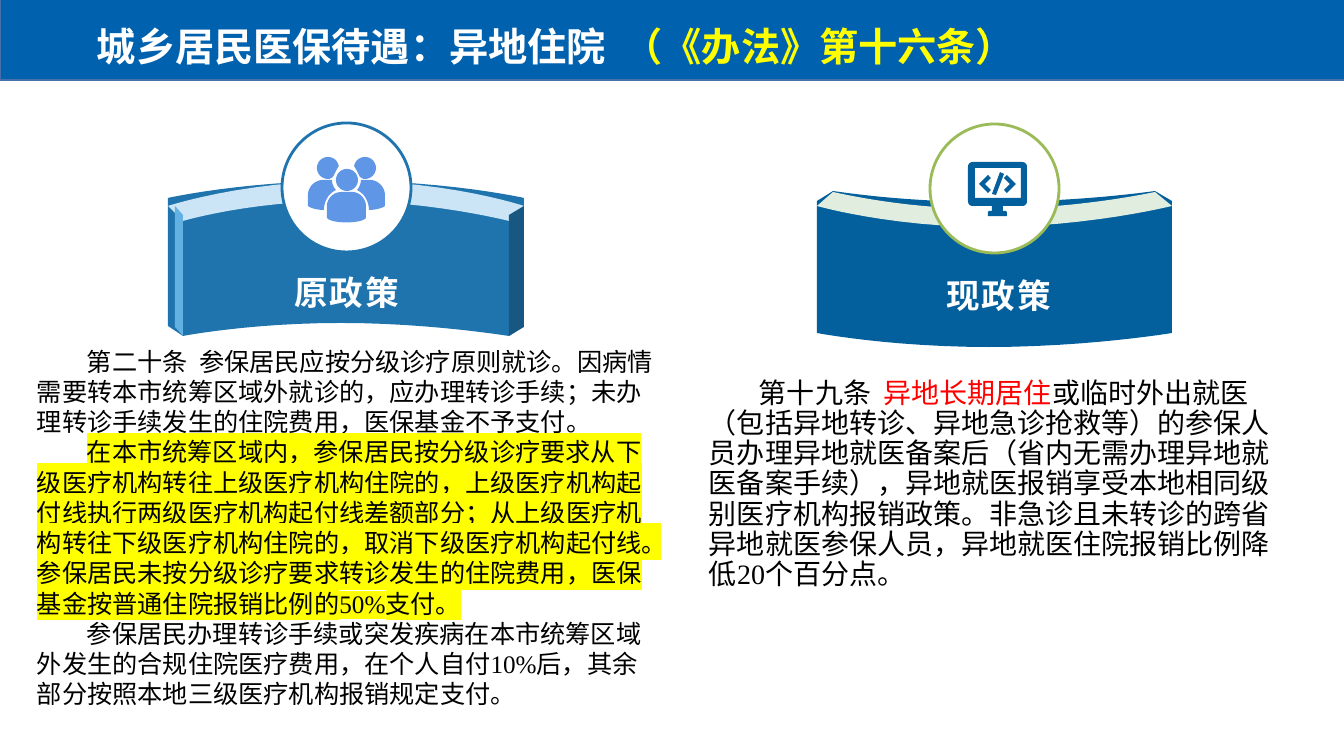
"""Build the slide comparing the former and current rules for inpatient care away from home."""
from math import cos, radians, sin

from lxml.etree import SubElement
from pptx import Presentation
from pptx.dml.color import RGBColor as RGB
from pptx.enum.shapes import MSO_SHAPE as SHAPE
from pptx.enum.text import MSO_ANCHOR as ANCHOR, PP_ALIGN as ALIGN
from pptx.oxml.ns import qn
from pptx.util import Emu, Pt

HEX = {
    "head": "0061AE", "edge": "476FAA", "white": "FFFFFF", "black": "000000",
    "yellow": "FFFF00", "red": "FF0000", "navy": "04609D", "pale": "E1EDDE",
    "green": "9BBB59", "blue": "1F74AD", "sky": "CBE5F6", "light": "63B0E3",
    "dark": "175782", "icon": "6096E6",
}
SONG, SANS, ARIAL = "Times New Roman", "Noto Sans CJK SC", "Arial"

TITLE = [[("城乡居民医保待遇：异地住院  ", "white", None),
          ("（《办法》第十六条）", "yellow", None)]]
OLD = [
    [("第二十条  参保居民应按分级诊疗原则就诊。因病情需要转本市统筹区域外就诊的，应办理转诊手续；"
      "未办理转诊手续发生的住院费用，医保基金不予支付。", "black", None)],
    [("在本市统筹区域内，参保居民按分级诊疗要求从下级医疗机构转往上级医疗机构住院的，"
      "上级医疗机构起付线执行两级医疗机构起付线差额部分；从上级医疗机构转往下级医疗机构住院的，"
      "取消下级医疗机构起付线。参保居民未按分级诊疗要求转诊发生的住院费用，"
      "医保基金按普通住院报销比例的50%支付。", "black", "yellow")],
    [("参保居民办理转诊手续或突发疾病在本市统筹区域外发生的合规住院医疗费用，在个人自付10%后，"
      "其余部分按照本地三级医疗机构报销规定支付。", "black", None)],
]
NEW = [[
    ("第十九条  ", "black", None),
    ("异地长期居住", "red", None),
    ("或临时外出就医（包括异地转诊、异地急诊抢救等）的参保人员办理异地就医备案后"
     "（省内无需办理异地就医备案手续），异地就医报销享受本地相同级别医疗机构报销政策。"
     "非急诊且未转诊的跨省异地就医参保人员，异地就医住院报销比例降低20个百分点。", "black", None),
]]

BOARD = [
    ("navy", [(1172, 201), (1155, 191), (1127, 195, 1061, 202, 989, 202),
              (917, 202, 860, 195, 833, 191), (817, 201), (817, 333),
              (817, 333, 890, 347, 989, 347), (1088, 347, 1172, 333, 1172, 333)]),
    ("pale", [(1155, 192), (1127, 198, 1061, 209, 988, 209),
              (917, 209, 860, 198, 833, 192), (817, 206),
              (817, 206, 890, 227, 988, 227), (1088, 227, 1172, 206, 1172, 206)]),
]
BLOCK = [
    ("blue", [(524, 198), (524, 198, 449, 181, 346, 181), (243, 181, 168, 198, 168, 198),
              (168, 326), (183, 336), (183, 336, 250, 323, 341, 323),
              (430, 323, 508, 336, 509, 336), (524, 326)]),
    ("sky", [(524, 206), (509, 221), (509, 221, 431, 201, 341, 201),
             (250, 201, 183, 221, 183, 221), (168, 206),
             (168, 206, 244, 181, 346, 181), (449, 181, 524, 206, 524, 206)]),
    ("light", [(183, 336), (175, 327), (175, 206), (183, 215)]),
    ("dark", [(509, 336), (524, 327), (524, 206), (509, 215)]),
]
SCREEN = [(973, 206), (992, 206), (992, 211), (989, 211), (988, 212), (988, 216),
          (1007, 216), (1007, 212), (1006, 211), (1003, 211), (1003, 206), (1022, 206),
          (1025, 206, 1027, 204, 1027, 201), (1027, 167), (1027, 164, 1025, 162, 1022, 162),
          (973, 162), (970, 162, 968, 164, 968, 167), (968, 201), (968, 204, 970, 206, 973, 206)]
GLASS = [(975, 168), (1021, 168), (1021, 198), (975, 198)]
ANGLE = [(991, 178), (985, 184), (991, 190), (988, 193), (979, 184), (988, 175)]
SLASH = [(1000, 172), (1004, 174), (996, 195), (992, 194)]
FRONT = [(342, 192), (352, 192), (360, 192, 366, 199, 366, 206), (366, 218),
         (362, 224, 331, 224, 327, 218), (327, 206), (327, 199, 333, 192, 342, 192)]
BACK = [(361, 180), (370, 180), (378, 180, 385, 187, 385, 195), (385, 206),
        (383, 208, 376, 210, 369, 210), (369, 202, 365, 194, 357, 190),
        (359, 188, 361, 184, 361, 180)]

PX = 914400 / 100.8


def emu(*vals):
    return [Emu(round(v * PX)) for v in vals]


def color(name):
    return RGB.from_string(HEX[name])


def arc(x, y, r, start=0, stop=360):
    return [(x + r * cos(radians(a)), y + r * sin(radians(a)))
            for a in range(start, stop + 1, 10)]


def flip(pts, total):
    return [(total - x, y) for x, y in pts]


def trace(path, steps=12):
    pts = [path[0]]
    for seg in path[1:]:
        if len(seg) == 2:
            pts.append(seg)
            continue
        x, y = pts[-1]
        a, b, c, d, e, f = seg
        for t in (k / steps for k in range(1, steps + 1)):
            u = 1 - t
            pts.append((u**3 * x + 3 * u * u * t * a + 3 * u * t * t * c + t**3 * e,
                        u**3 * y + 3 * u * u * t * b + 3 * u * t * t * d + t**3 * f))
    return pts


def paint(shape, fill, line=None, width=1):
    shape.shadow.inherit = False
    shape.fill.solid()
    shape.fill.fore_color.rgb = color(fill)
    if line:
        shape.line.color.rgb = color(line)
        shape.line.width = Pt(width)
    else:
        shape.line.fill.background()


def outline(slide, fill, *paths):
    pen = None
    for path in paths:
        first, *rest = [emu(*pt) for pt in trace(path)]
        if pen is None:
            pen = slide.shapes.build_freeform(*first, scale=1.0)
        else:
            pen.move_to(*first)
        pen.add_line_segments(rest, close=True)
    paint(pen.convert_to_shape(), fill)


def write(slide, box, paras, size, face, bold=False, indent=0, align=None,
          space=None, gap=0, inset=(10, 5), anchor=ANCHOR.TOP):
    frame = slide.shapes.add_textbox(*emu(*box)).text_frame
    frame.word_wrap = True
    frame.vertical_anchor = anchor
    frame.margin_left, frame.margin_top = emu(*inset)
    frame.margin_right, frame.margin_bottom = emu(*inset)
    for i, runs in enumerate(paras):
        para = frame.add_paragraph() if i else frame.paragraphs[0]
        if align is not None:
            para.alignment = align
        if space:
            para.line_spacing = space
        if indent:
            prop = para._p.get_or_add_pPr()
            prop.set("marL", "0")
            prop.set("indent", str(emu(indent)[0]))
        for text, ink, mark in runs:
            run = para.add_run()
            run.text = text
            run.font.size, run.font.bold = Pt(size), bold
            run.font.color.rgb = color(ink)
            prop = run._r.get_or_add_rPr()
            if mark:
                light = SubElement(prop, qn("a:highlight"))
                SubElement(light, qn("a:srgbClr")).set("val", HEX[mark])
            run.font.name = face
            if face == SANS:
                SubElement(prop, qn("a:ea")).set("typeface", face)
            if gap:
                prop.set("spc", str(gap))


def banner(slide, parts, disc, ring, label, box):
    for fill, path in parts:
        outline(slide, fill, path)
    paint(slide.shapes.add_shape(SHAPE.OVAL, *emu(*disc, 129, 129)), "white", ring, 2)
    write(slide, (*box, 323, 50), [[(label, "white", None)]], 24, ARIAL,
          bold=True, align=ALIGN.CENTER, gap=150)


def main():
    deck = Presentation()
    deck.slide_width, deck.slide_height = emu(1344, 756)
    slide = deck.slides.add_slide(deck.slide_layouts[6])

    head = slide.shapes.add_shape(SHAPE.RECTANGLE, *emu(0, -1, 1349, 81))
    paint(head, "head", "edge")
    write(slide, (87, 16, 947, 60), TITLE, 28, SANS, bold=True, anchor=ANCHOR.MIDDLE)
    write(slide, (27, 341, 644, 539), OLD, 18, SONG, indent=50)
    write(slide, (702, 375, 593, 262), NEW, 20, SONG, indent=50, space=0.9, inset=(7, 4))

    banner(slide, BOARD, (930, 124), "green", "现政策", (837, 270))
    outline(slide, "navy", SCREEN, GLASS, ANGLE, flip(ANGLE, 1995), SLASH)

    banner(slide, BLOCK, (282, 123), "blue", "原政策", (185, 267))
    body = trace(BACK)
    face = arc(365, 168, 11, 190, 460) + [(360, 177), (357, 171)]
    outline(slide, "icon", FRONT, arc(347, 180, 11), body, flip(body, 693),
            face, flip(face, 693))
    deck.save("out.pptx")


if __name__ == "__main__":
    main()
